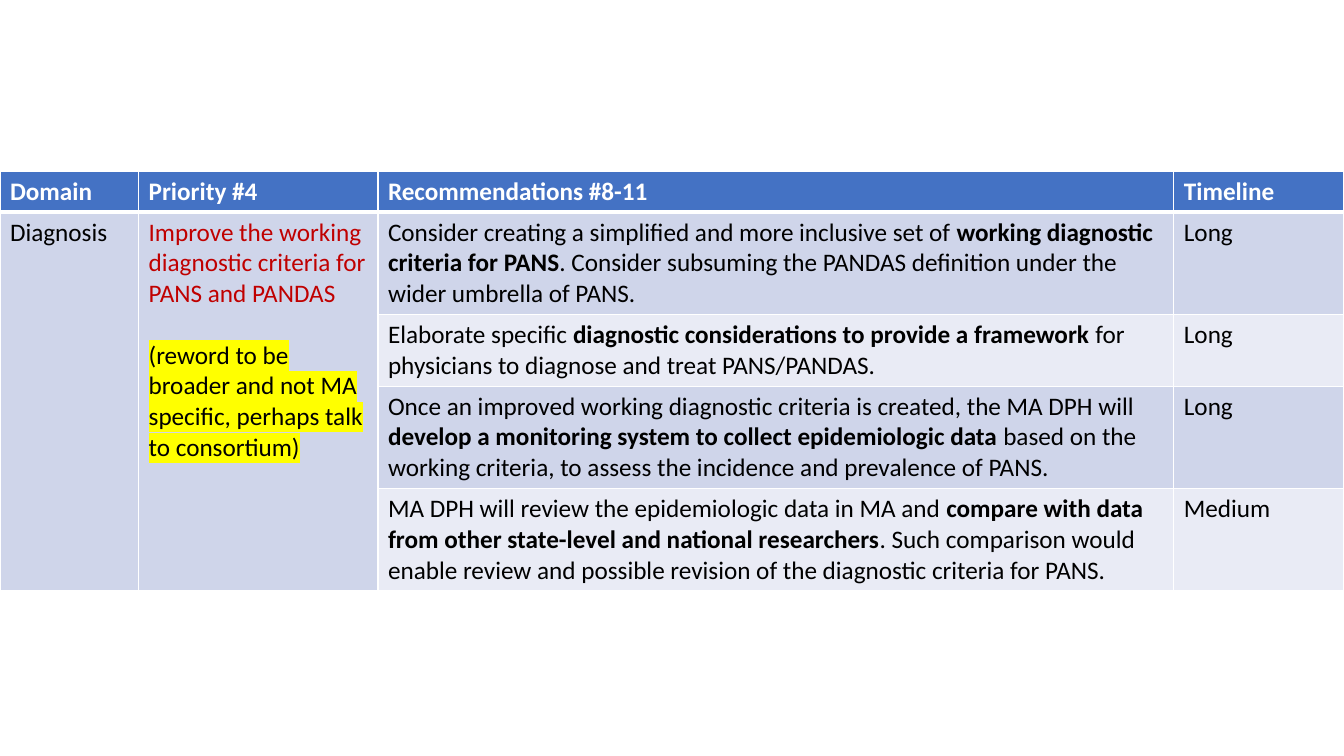
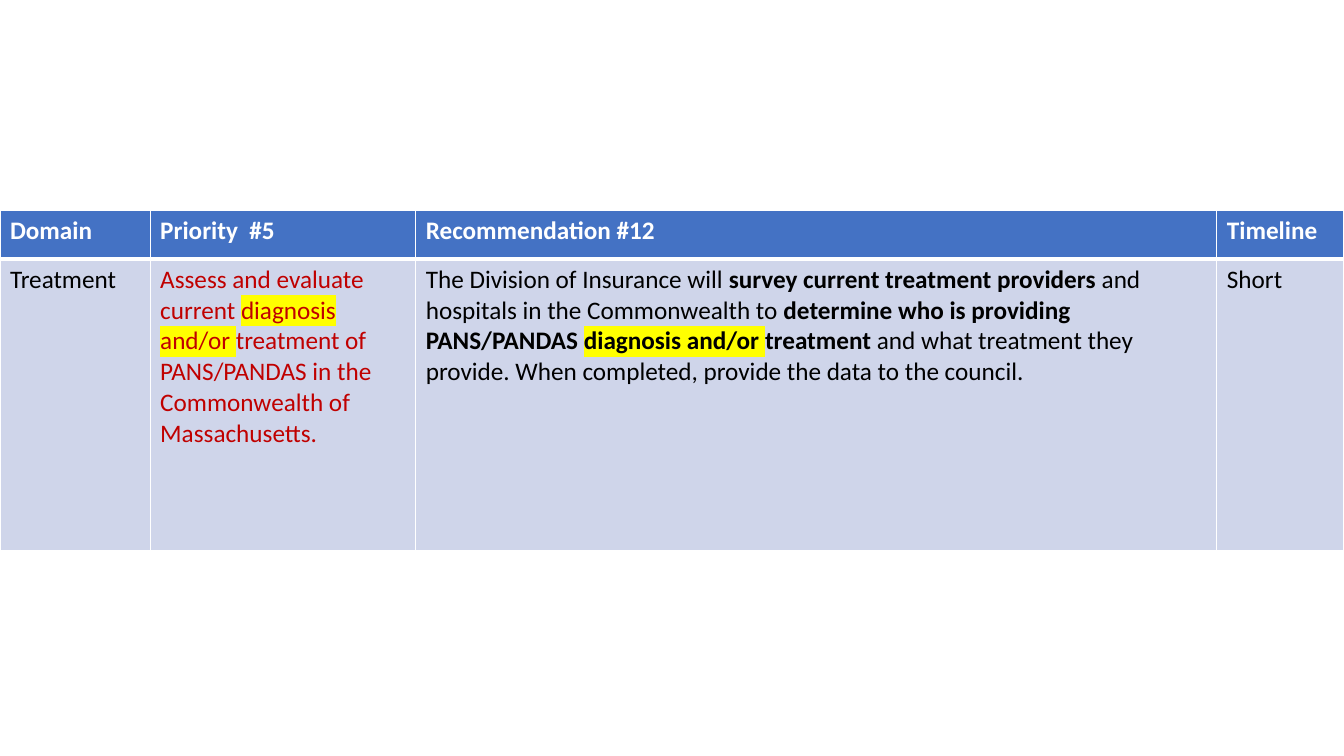
import pptx
import pptx.dml.color
import pptx.oxml
import pptx.oxml.ns
import pptx.util

RGB = pptx.dml.color.RGBColor
BLUE = RGB(0x44, 0x72, 0xC4)
BAND = RGB(0xCF, 0xD5, 0xEA)
PALE = RGB(0xE9, 0xEB, 0xF5)
WHITE = RGB(0xFF, 0xFF, 0xFF)
BLACK = RGB(0x00, 0x00, 0x00)
RED = RGB(0xC0, 0x00, 0x00)
YELLOW = RGB(0xFF, 0xFF, 0x00)

PX = 9525
WIDE, HIGH = 1280, 720
BASE = {"name": "Calibri", "size": pptx.util.Pt(18), "bold": False}
BOLD = {**BASE, "bold": True}
NS = pptx.oxml.ns.nsdecls("a")

LOOKS = {
    "head": (BOLD, WHITE, None),
    "text": (BASE, BLACK, None),
    "bold": (BOLD, BLACK, None),
    "goal": (BASE, RED, None),
    "note": (BASE, BLACK, YELLOW),
    "goal note": (BASE, RED, YELLOW),
    "bold note": (BOLD, BLACK, YELLOW),
}


def write(para, runs):
    for words, look in runs:
        form, color, mark = LOOKS[look]
        run = para.add_run()
        run.text = words
        for key, value in form.items():
            setattr(run.font, key, value)
        run.font.color.rgb = color
        if mark is not None:
            light = pptx.oxml.parse_xml(
                f'<a:highlight {NS}><a:srgbClr val="{mark}"/></a:highlight>')
            run.font.fill._xPr.find(pptx.oxml.ns.qn("a:solidFill")).addnext(light)


def frame(cell, top, base):
    props = cell._tc.get_or_add_tcPr()
    sides = {"lnL": 1, "lnR": 1, "lnT": top, "lnB": base}
    for spot, (side, points) in enumerate(sides.items()):
        props.insert(spot, pptx.oxml.parse_xml(
            f'<a:{side} {NS} w="{pptx.util.Pt(points)}"><a:solidFill>'
            f'<a:srgbClr val="{WHITE}"/></a:solidFill></a:{side}>'))


SLIDES = [
    {
        "top": 163,
        "cols": [132, 228, 758, 162],
        "rows": [39, 97, 68, 97, 97],
        "heads": ["Domain", "Priority #4", "Recommendations #8-11", "Timeline"],
        "domain": "Diagnosis",
        "goal": [
            [("Improve the working diagnostic criteria for PANS and PANDAS", "goal")],
            [("(reword to be broader and not MA specific, perhaps talk to consortium)", "note")],
        ],
        "steps": [
            ([("Consider creating a simplified and more inclusive set of ", "text"),
              ("working diagnostic criteria for PANS", "bold"),
              (". Consider subsuming the PANDAS definition under the wider umbrella of PANS.", "text")],
             "Long"),
            ([("Elaborate specific ", "text"),
              ("diagnostic considerations to provide a framework", "bold"),
              (" for physicians to diagnose and treat PANS/PANDAS.", "text")],
             "Long"),
            ([("Once an improved working diagnostic criteria is created, the MA DPH will ", "text"),
              ("develop a monitoring system to collect epidemiologic data", "bold"),
              (" based on the working criteria, to assess the incidence and prevalence of PANS.", "text")],
             "Long"),
            ([("MA DPH will review the epidemiologic data in MA and ", "text"),
              ("compare with data from other state-level and national researchers", "bold"),
              (". Such comparison would enable review and possible revision of the diagnostic criteria for PANS.", "text")],
             "Medium"),
        ],
    },
    {
        "top": 200,
        "cols": [143, 253, 763, 121],
        "rows": [47, 277],
        "heads": ["Domain", "Priority  #5", "Recommendation #12", "Timeline"],
        "domain": "Treatment",
        "goal": [
            [("Assess and evaluate current ", "goal"),
             ("diagnosis and/or ", "goal note"),
             ("treatment of PANS/PANDAS in the Commonwealth of Massachusetts.", "goal")],
        ],
        "steps": [
            ([("The Division of Insurance will ", "text"),
              ("survey current treatment providers", "bold"),
              (" and hospitals in the Commonwealth to ", "text"),
              ("determine who is providing PANS/PANDAS ", "bold"),
              ("diagnosis and/or ", "bold note"),
              ("treatment", "bold"),
              (" and what treatment they provide. When completed, provide the data to the council.", "text")],
             "Short"),
        ],
    },
]

deck = pptx.Presentation()
deck.slide_width = WIDE * PX
deck.slide_height = HIGH * PX

for page in SLIDES:
    slide = deck.slides.add_slide(deck.slide_layouts[6])
    cols, rows = page["cols"], page["rows"]
    grid = slide.shapes.add_table(
        len(rows), len(cols), 0, page["top"] * PX, WIDE * PX, sum(rows) * PX).table
    for col, width in zip(grid.columns, cols):
        col.width = width * PX
    for row, height in zip(grid.rows, rows):
        row.height = height * PX

    last = len(rows) - 1
    for r in range(len(rows)):
        for c in range(len(cols)):
            cell = grid.cell(r, c)
            cell.fill.solid()
            cell.fill.fore_color.rgb = BLUE if r == 0 else BAND if r % 2 else PALE
            frame(cell, 3 if r == 1 else 1, 3 if r == 0 else 1)
    if last > 1:
        for c in range(2):
            grid.cell(1, c).merge(grid.cell(last, c))

    for c, head in enumerate(page["heads"]):
        write(grid.cell(0, c).text_frame.paragraphs[0], [(head, "head")])
    write(grid.cell(1, 0).text_frame.paragraphs[0], [(page["domain"], "text")])
    body = grid.cell(1, 1).text_frame
    for n, runs in enumerate(page["goal"]):
        para = body.add_paragraph() if n else body.paragraphs[0]
        para.space_before = pptx.util.Pt(22 if n else 0)
        write(para, runs)
    for r, (runs, term) in enumerate(page["steps"], 1):
        write(grid.cell(r, 2).text_frame.paragraphs[0], runs)
        write(grid.cell(r, 3).text_frame.paragraphs[0], [(term, "text")])

deck.save("out.pptx")
